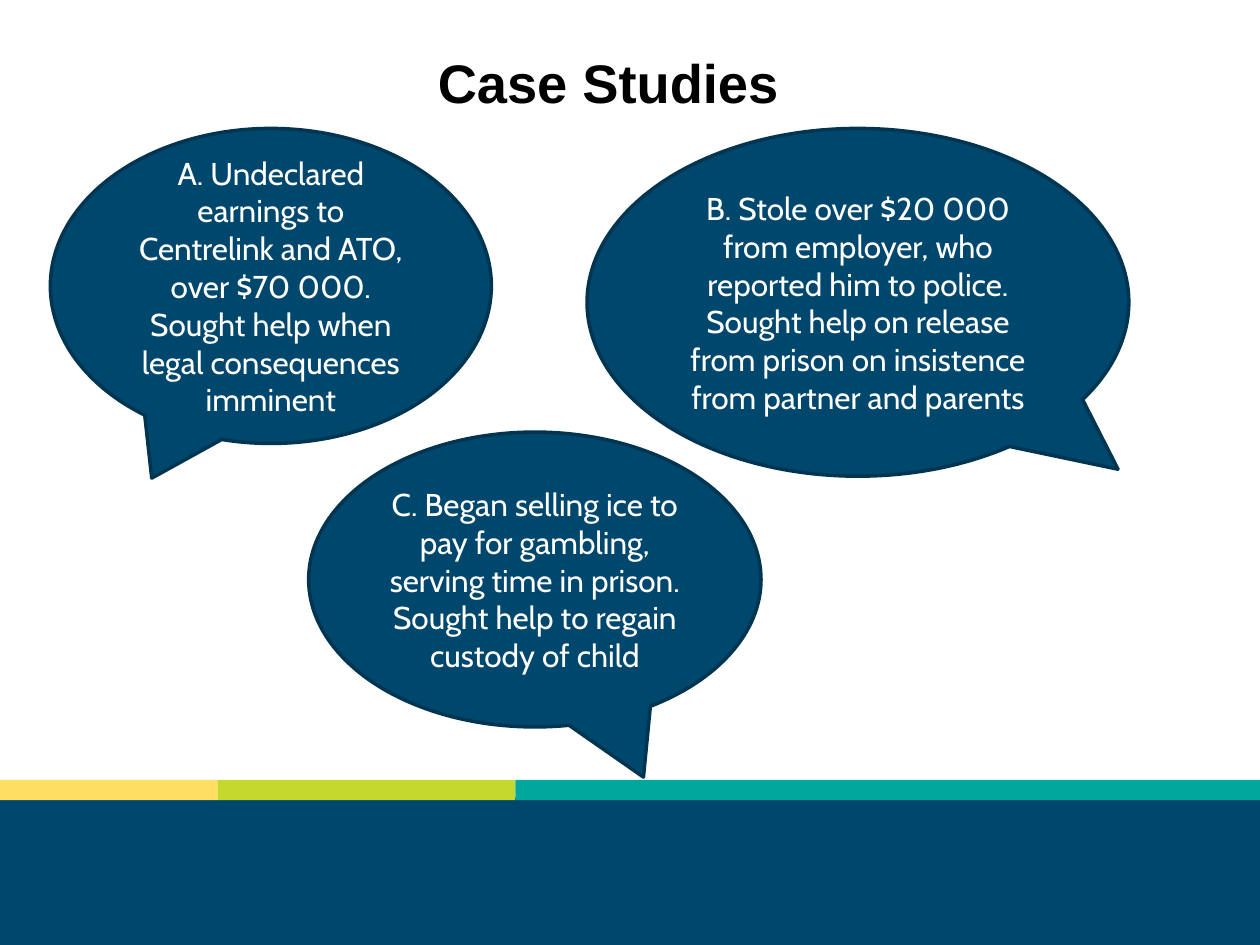
"""Build the Case Studies slide with three speech bubbles above a coloured footer."""
from pptx import Presentation
from pptx.dml.color import RGBColor
from pptx.enum import shapes, text
from pptx.util import Inches, Pt

NAVY = "00476D"
OUTLINE = "003551"
WIDTH, HEIGHT = 10, 7.5
FOOTER_TOP = 6.33
STRIP_TOP, STRIP_HEIGHT = 6.19, 0.16

TITLE = "Case Studies"
STRIPS = [("FFDF63", 1.73), ("C4D82E", 2.36), ("00A79D", 5.91)]
CASES = [
    ("A. Undeclared earnings to Centrelink and ATO, over $70 000. "
     "Sought help when legal consequences imminent",
     (0.4, 1.02, 3.5, 2.5), (-0.27, 0.61)),
    ("B. Stole over $20 000 from employer, who reported him to police. "
     "Sought help on release from prison on insistence from partner and parents",
     (4.66, 1.02, 4.3, 2.76), (0.48, 0.48)),
    ("C. Began selling ice to pay for gambling, serving time in prison. "
     "Sought help to regain custody of child",
     (2.45, 3.43, 3.59, 2.34), (0.24, 0.67)),
]


def color(value):
    return RGBColor.from_string(value)


def add_filled(slide, kind, box, fill):
    shape = slide.shapes.add_shape(kind, *map(Inches, box))
    shape.shadow.inherit = False
    shape.fill.solid()
    shape.fill.fore_color.rgb = color(fill)
    shape.line.fill.background()
    return shape


def write(shape, words, font, size, ink, bold=False):
    frame = shape.text_frame
    frame.text = words
    frame.word_wrap = True
    paragraph = frame.paragraphs[0]
    paragraph.alignment = text.PP_ALIGN.CENTER
    style = paragraph.runs[0].font
    style.name, style.size, style.bold = font, Pt(size), bold
    style.color.rgb = color(ink)
    return frame


def add_footer(slide):
    rectangle = shapes.MSO_SHAPE.RECTANGLE
    add_filled(slide, rectangle, (0, FOOTER_TOP, WIDTH, HEIGHT - FOOTER_TOP), NAVY)
    left = 0
    for fill, width in STRIPS:
        add_filled(slide, rectangle, (left, STRIP_TOP, width, STRIP_HEIGHT), fill)
        left += width


def add_title(slide):
    title = slide.shapes.add_textbox(*map(Inches, (0.69, 0.35, 8.27, 0.59)))
    frame = write(title, TITLE, "Arial", 31, "000000", bold=True)
    frame.margin_left = frame.margin_right = Inches(0.07)
    frame.margin_top = frame.margin_bottom = Inches(0.04)
    frame.auto_size = text.MSO_AUTO_SIZE.SHAPE_TO_FIT_TEXT


def add_case(slide, words, box, tip):
    bubble = add_filled(slide, shapes.MSO_SHAPE.OVAL_CALLOUT, box, NAVY)
    bubble.adjustments[0], bubble.adjustments[1] = tip
    bubble.line.color.rgb = color(OUTLINE)
    bubble.line.width = Pt(2)
    frame = write(bubble, words, "Cabin", 18, "FFFFFF")
    frame.vertical_anchor = text.MSO_ANCHOR.MIDDLE


def main():
    presentation = Presentation()
    presentation.slide_width = Inches(WIDTH)
    presentation.slide_height = Inches(HEIGHT)
    slide = presentation.slides.add_slide(presentation.slide_layouts[6])
    add_footer(slide)
    add_title(slide)
    for case in CASES:
        add_case(slide, *case)
    presentation.save("out.pptx")


if __name__ == "__main__":
    main()
